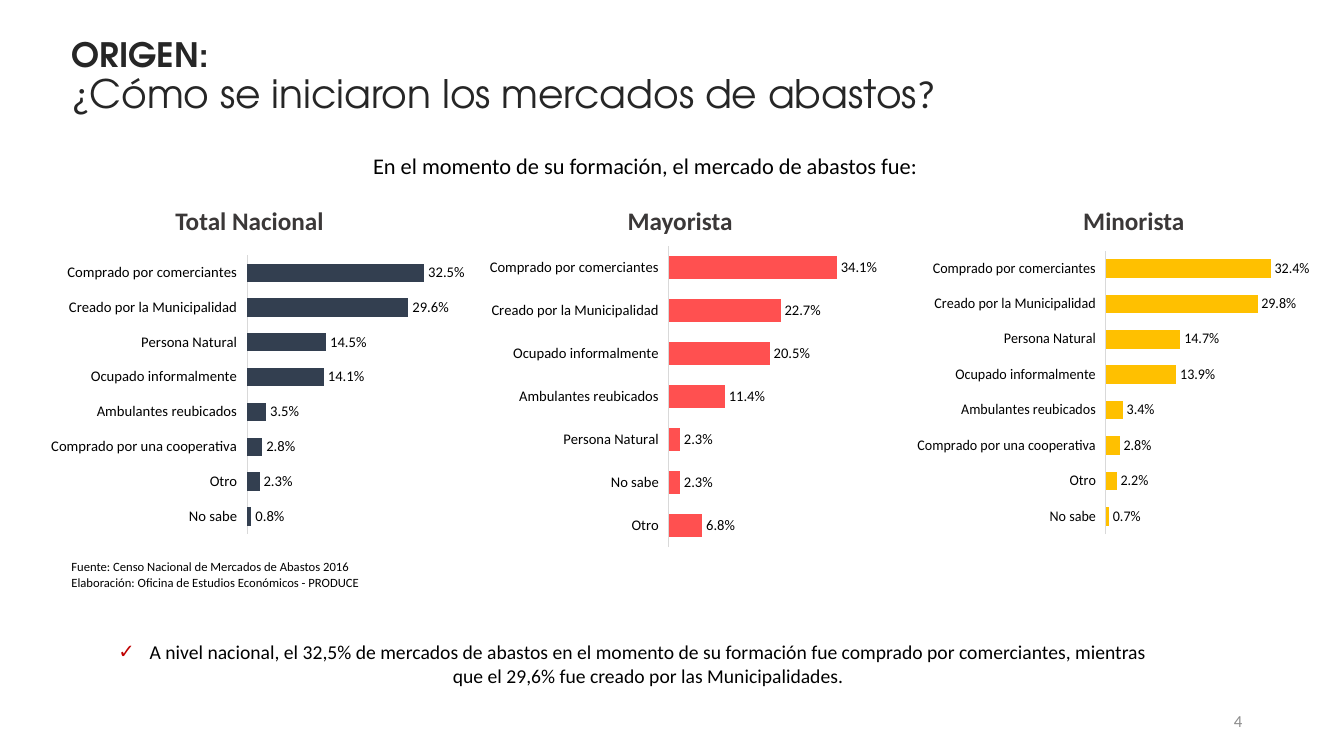
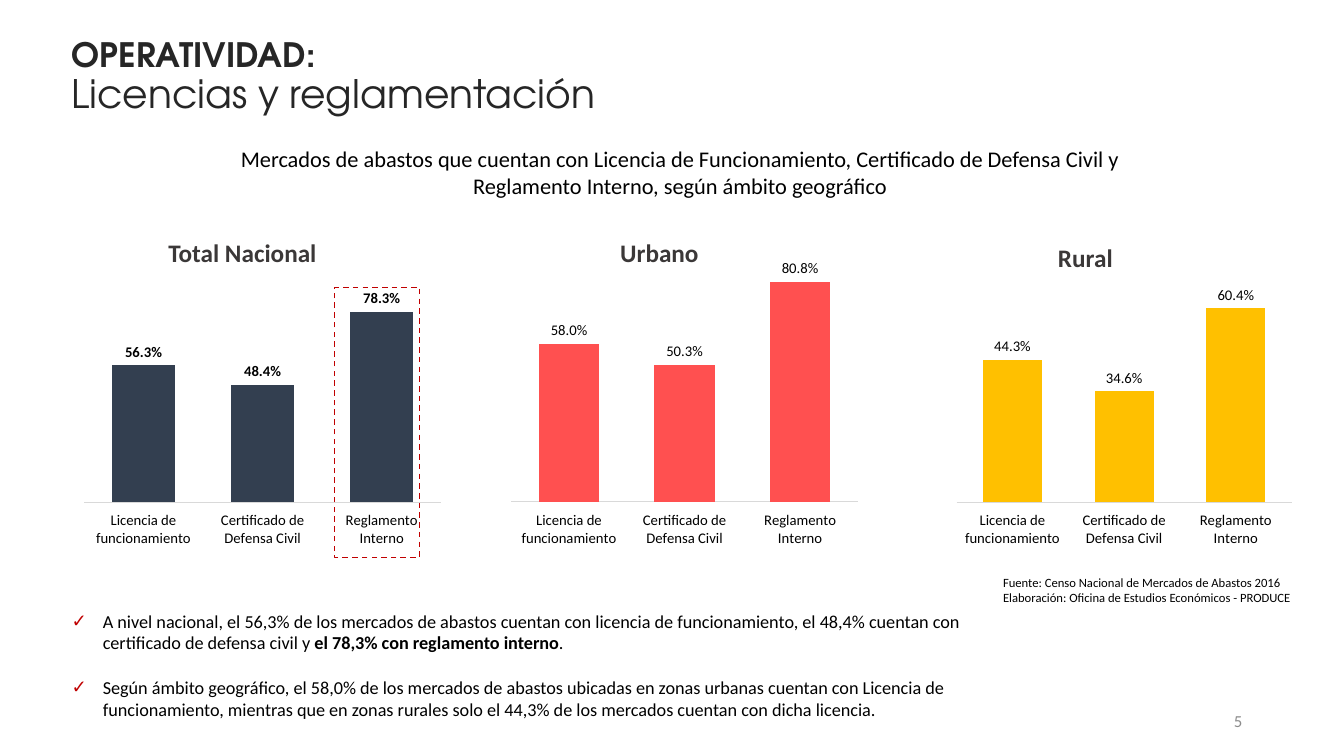
from copy import deepcopy
from dataclasses import dataclass

from lxml import etree
from pptx import Presentation
from pptx.chart.data import CategoryChartData
from pptx.dml.color import RGBColor
from pptx.enum.chart import XL_CHART_TYPE, XL_LABEL_POSITION, XL_TICK_LABEL_POSITION, XL_TICK_MARK
from pptx.enum.dml import MSO_LINE
from pptx.enum.shapes import MSO_SHAPE
from pptx.enum.text import MSO_ANCHOR, MSO_AUTO_SIZE, PP_ALIGN
from pptx.oxml.ns import qn
from pptx.util import Emu, Pt

BAR, COLUMN = XL_CHART_TYPE.BAR_CLUSTERED, XL_CHART_TYPE.COLUMN_CLUSTERED
OUTSIDE_END = XL_LABEL_POSITION.OUTSIDE_END
LABELS_LOW = XL_TICK_LABEL_POSITION.LOW
NO_TICK = XL_TICK_MARK.NONE
DASH = MSO_LINE.DASH
RECTANGLE = MSO_SHAPE.RECTANGLE
TOP, MIDDLE = MSO_ANCHOR.TOP, MSO_ANCHOR.MIDDLE
FIXED, GROW = MSO_AUTO_SIZE.NONE, MSO_AUTO_SIZE.SHAPE_TO_FIT_TEXT
LEFT, CENTER, RIGHT = PP_ALIGN.LEFT, PP_ALIGN.CENTER, PP_ALIGN.RIGHT

EMU_PER_PX = 9144
SLIDE_SIZE = (1333, 750)
TITLE_BOX = (61, 25, 1196, 105)
NUMBER_BOX = (942, 695, 300, 40)
HEADING_HEIGHT = 40
BULLET_INDENT = 31
PERCENT = "0.0%"


@dataclass(frozen=True)
class Theme:
    body_font: str = "Calibri"
    title_font: str = "TeX Gyre Adventor"
    text: str = "000000"
    title: str = "262626"
    heading: str = "3B3838"
    number: str = "8C8C8C"
    accent: str = "C00000"
    axis: str = "D9D9D9"
    navy: str = "333F50"
    red: str = "FF5050"
    gold: str = "FFC000"
    kicker_size: float = 24
    title_size: float = 28
    heading_size: float = 18
    subtitle_size: float = 16
    number_size: float = 12
    chart_size: float = 10
    label_size: float = 10.5
    source_size: float = 9


THEME = Theme()

SOURCE = [
    "Fuente: Censo Nacional de Mercados de Abastos 2016",
    "Elaboración: Oficina de Estudios Económicos - PRODUCE",
]
ORIGINS = [
    "Comprado por comerciantes",
    "Creado por la Municipalidad",
    "Persona Natural",
    "Ocupado informalmente",
    "Ambulantes reubicados",
    "Comprado por una cooperativa",
    "Otro",
    "No sabe",
]
WHOLESALE_ORIGINS = [ORIGINS[index] for index in (0, 1, 3, 4, 2, 7, 6)]
PERMITS = ["Licencia de funcionamiento", "Certificado de Defensa Civil", "Reglamento Interno"]
BODY_FONT = {"font": THEME.body_font}

SLIDES = [
    {
        "number": "4",
        "kicker": "ORIGEN:",
        "title": [
            ("¿", BODY_FONT),
            ("Cómo se iniciaron los mercados de abastos", {}),
            ("?", BODY_FONT),
        ],
        "subtitle": "En el momento de su formación, el mercado de abastos fue:",
        "subtitle_box": (280, 146, 720, 37),
        "source_box": (61, 550, 621, 40),
        "body_box": (94, 630, 1067, 57),
        "body_format": {"size": 14, "align": CENTER},
        "body": [
            "A nivel nacional, el 32,5% de mercados de abastos en el momento de su formación "
            "fue comprado por comerciantes, mientras que el 29,6% fue creado por las Municipalidades."
        ],
        "kind": BAR,
        "charts": [
            {
                "heading": "Total Nacional", "heading_at": (123, 199, 249),
                "box": (39, 238, 422, 307), "color": THEME.navy,
                "categories": ORIGINS, "plot": (0.49, 0.05, 0.45, 0.9),
                "values": [0.325, 0.296, 0.145, 0.141, 0.035, 0.028, 0.023, 0.008],
            },
            {
                "heading": "Mayorista", "heading_at": (550, 199, 249),
                "box": (478, 238, 392, 311), "color": THEME.red,
                "categories": WHOLESALE_ORIGINS,
                "values": [0.341, 0.227, 0.205, 0.114, 0.023, 0.023, 0.068],
            },
            {
                "heading": "Minorista", "heading_at": (1000, 199, 249),
                "box": (888, 233, 411, 316), "color": THEME.gold,
                "categories": ORIGINS, "plot": (0.53, 0.05, 0.45, 0.89),
                "values": [0.324, 0.298, 0.147, 0.139, 0.034, 0.028, 0.022, 0.007],
            },
        ],
    },
    {
        "number": "5",
        "kicker": "OPERATIVIDAD:",
        "title": [("Licencias y reglamentación", {})],
        "subtitle": "Mercados de abastos que cuentan con Licencia de Funcionamiento, Certificado de "
                    "Defensa Civil y Reglamento Interno, según ámbito geográfico",
        "subtitle_box": (194, 139, 961, 64),
        "source_box": (985, 565, 310, 40),
        "body_box": (61, 600, 938, 141),
        "body_format": {"size": 13, "gap": 16},
        "body": [
            [
                ("A nivel nacional, el 56,3% de los mercados de abastos cuentan con licencia de "
                 "funcionamiento, el 48,4% cuentan con certificado de defensa civil y ", {}),
                ("el 78,3% con reglamento interno", {"bold": True}),
                (".", {}),
            ],
            "Según ámbito geográfico, el 58,0% de los mercados de abastos ubicadas en zonas urbanas "
            "cuentan con Licencia de funcionamiento, mientras que en zonas rurales solo el 44,3% "
            "de los mercados cuentan con dicha licencia.",
        ],
        "kind": COLUMN,
        "charts": [
            {
                "heading": "Total Nacional", "heading_at": (116, 231, 249),
                "box": (76, 276, 369, 273), "color": THEME.navy, "bold": True,
                "categories": PERMITS, "values": [0.563, 0.484, 0.783],
            },
            {
                "heading": "Urbano", "heading_at": (439, 231, 430),
                "box": (500, 249, 358, 300), "color": THEME.red,
                "categories": PERMITS, "values": [0.58, 0.503, 0.808],
            },
            {
                "heading": "Rural", "heading_at": (868, 235, 417),
                "box": (942, 270, 346, 279), "color": THEME.gold,
                "categories": PERMITS, "values": [0.443, 0.346, 0.604],
            },
        ],
        "highlight_box": (332, 285, 84, 268),
    },
]


def px(value):
    return Emu(value * EMU_PER_PX)


def place(shape, box):
    shape.left, shape.top, shape.width, shape.height = map(px, box)


def set_font(font, size, color=THEME.text, name=THEME.body_font, bold=False):
    font.size = Pt(size)
    font.name = name
    font.bold = bold
    font.color.rgb = RGBColor.from_string(color)


def add_check_bullet(paragraph):
    properties = paragraph._p.get_or_add_pPr()
    properties.set("marL", str(px(BULLET_INDENT)))
    properties.set("indent", str(-px(BULLET_INDENT)))
    color = etree.SubElement(properties, qn("a:buClr"))
    etree.SubElement(color, qn("a:srgbClr")).set("val", THEME.accent)
    etree.SubElement(properties, qn("a:buChar")).set("char", "✓")


def write_text(shape, paragraphs, size=THEME.source_size, color=THEME.text, font=THEME.body_font,
               bold=False, align=LEFT, anchor=TOP, line_spacing=1.0, gap=0, check=False, fit=FIXED):
    frame = shape.text_frame
    frame.word_wrap = True
    frame.auto_size = fit
    frame.vertical_anchor = anchor
    for index, content in enumerate(paragraphs):
        paragraph = frame.add_paragraph() if index else frame.paragraphs[0]
        if check:
            add_check_bullet(paragraph)
        paragraph.alignment = align
        paragraph.line_spacing = line_spacing
        paragraph.space_before = Pt(gap if index else 0)
        runs = [(content, {})] if isinstance(content, str) else content
        for text, changes in runs:
            if text == "\n":
                paragraph.add_line_break()
                paragraph._p[-1].append(deepcopy(run._r.rPr))
                continue
            run = paragraph.add_run()
            run.text = text
            set_font(run.font, changes.get("size", size), color,
                     changes.get("font", font), changes.get("bold", bold))


def add_text(slide, box, paragraphs, **text_format):
    shape = slide.shapes.add_textbox(*map(px, box))
    write_text(shape, paragraphs, **text_format)


def set_plot_area(chart, fractions):
    plot_area = chart._chartSpace.chart.plotArea
    for old_layout in plot_area.findall(qn("c:layout")):
        plot_area.remove(old_layout)
    layout = etree.Element(qn("c:layout"))
    manual = etree.SubElement(layout, qn("c:manualLayout"))
    settings = [("layoutTarget", "inner"), ("xMode", "edge"), ("yMode", "edge")]
    settings += zip("xywh", fractions)
    for tag, value in settings:
        etree.SubElement(manual, qn(f"c:{tag}")).set("val", str(value))
    plot_area.insert(0, layout)


def add_percent_chart(slide, kind, details):
    data = CategoryChartData(number_format=PERCENT)
    data.categories = details["categories"]
    data.add_series("Series 1", details["values"])
    chart = slide.shapes.add_chart(kind, *map(px, details["box"]), data).chart
    chart.has_legend = False
    chart.has_title = False
    set_font(chart.font, THEME.chart_size)

    category_axis = chart.category_axis
    category_axis.reverse_order = kind == BAR
    category_axis.has_major_gridlines = False
    category_axis.major_tick_mark = category_axis.minor_tick_mark = NO_TICK
    category_axis.tick_label_position = LABELS_LOW
    category_axis.format.line.color.rgb = RGBColor.from_string(THEME.axis)
    category_axis.format.line.width = Pt(0.75)
    set_font(category_axis.tick_labels.font, THEME.label_size)

    value_axis = chart.value_axis
    value_axis.minimum_scale = 0
    value_axis.has_major_gridlines = False
    value_axis.visible = False

    plot = chart.plots[0]
    plot.vary_by_categories = False
    plot.gap_width = 90
    plot.overlap = -27 if kind == COLUMN else 0
    fill = plot.series[0].format.fill
    fill.solid()
    fill.fore_color.rgb = RGBColor.from_string(details["color"])
    plot.has_data_labels = True
    labels = plot.data_labels
    labels.show_value = True
    labels.number_format = PERCENT
    labels.number_format_is_linked = False
    labels.position = OUTSIDE_END
    set_font(labels.font, THEME.label_size, bold=details.get("bold", False))
    if "plot" in details:
        set_plot_area(chart, details["plot"])


def add_highlight(slide, box):
    shape = slide.shapes.add_shape(RECTANGLE, *map(px, box))
    shape.shadow.inherit = False
    shape.fill.background()
    shape.line.color.rgb = RGBColor.from_string(THEME.accent)
    shape.line.width = Pt(1)
    shape.line.dash_style = DASH


def build_slide(presentation, content):
    slide = presentation.slides.add_slide(presentation.slide_layouts[1])
    title, body = slide.shapes.title, slide.placeholders[1]
    place(title, TITLE_BOX)
    kicker = (content["kicker"], {"size": THEME.kicker_size, "bold": True})
    write_text(title, [[kicker, ("\n", {}), *content["title"]]], size=THEME.title_size,
               color=THEME.title, font=THEME.title_font, anchor=MIDDLE, line_spacing=0.9)
    place(body, content["body_box"])
    write_text(body, content["body"], check=True, **content["body_format"])
    add_text(slide, content["subtitle_box"], [content["subtitle"]],
             size=THEME.subtitle_size, align=CENTER, fit=GROW)
    add_text(slide, content["source_box"], SOURCE, fit=GROW)
    for details in content["charts"]:
        add_percent_chart(slide, content["kind"], details)
        add_text(slide, (*details["heading_at"], HEADING_HEIGHT), [details["heading"]],
                 size=THEME.heading_size, color=THEME.heading, bold=True, align=CENTER, fit=GROW)
    if "highlight_box" in content:
        add_highlight(slide, content["highlight_box"])
    add_text(slide, NUMBER_BOX, [content["number"]], size=THEME.number_size,
             color=THEME.number, align=RIGHT, anchor=MIDDLE)


def main():
    presentation = Presentation()
    presentation.slide_width, presentation.slide_height = map(px, SLIDE_SIZE)
    for content in SLIDES:
        build_slide(presentation, content)
    presentation.save("out.pptx")


if __name__ == "__main__":
    main()
